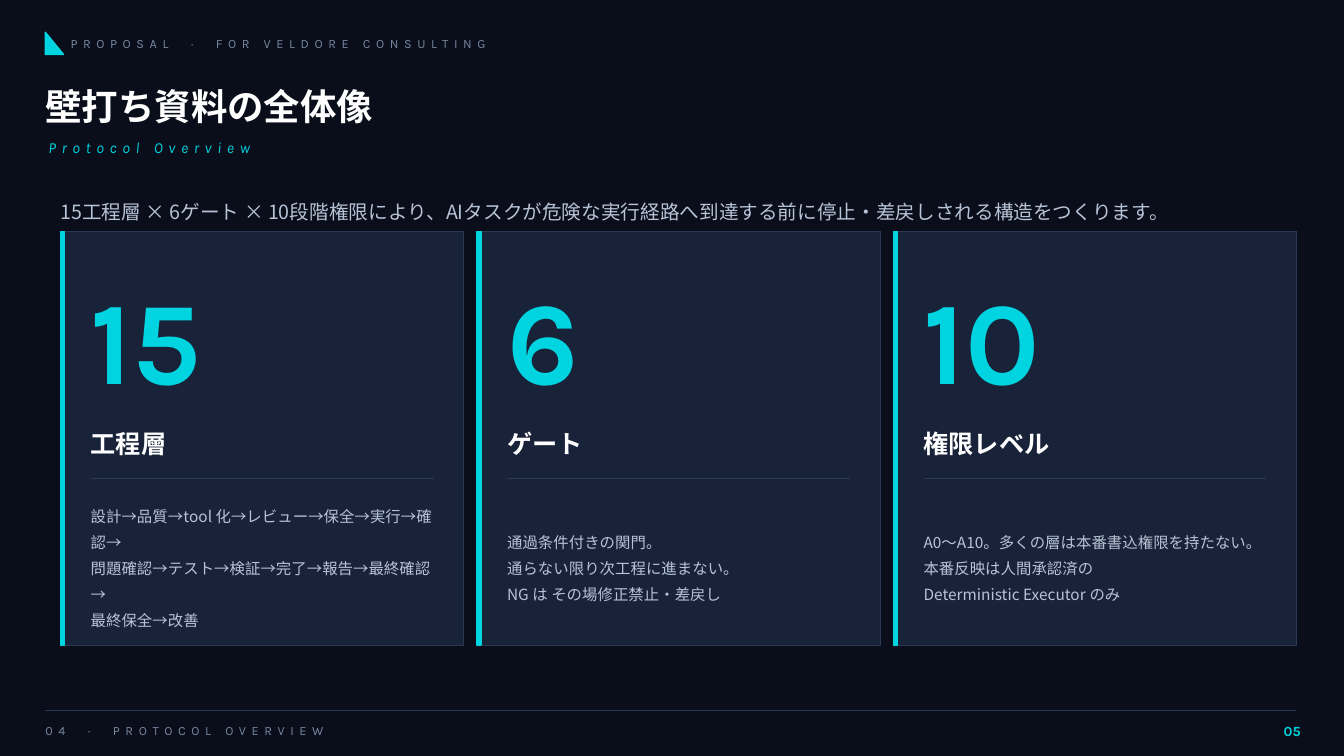
from lxml.etree import SubElement
from pptx import Presentation
from pptx.dml.color import RGBColor
from pptx.enum.shapes import MSO_CONNECTOR, MSO_SHAPE
from pptx.enum.text import MSO_ANCHOR, MSO_AUTO_SIZE, PP_ALIGN
from pptx.oxml.ns import qn
from pptx.util import Inches, Pt

COLUMN = ROW = 0.1
LATIN, JAPANESE = "Karla", "Noto Sans CJK JP"
NIGHT, PANEL, EDGE = "0A0E1A", "182238", "2A3A55"
CYAN, WHITE, MIST, SLATE = "00D4E0", "FFFFFF", "B7C3D6", "7787A0"

CARDS = [
    ("15", "工程層",
     "設計→品質→tool 化→レビュー→保全→実行→確認→\n"
     "問題確認→テスト→検証→完了→報告→最終確認→\n最終保全→改善"),
    ("6", "ゲート",
     "通過条件付きの関門。\n通らない限り次工程に進まない。\nNG は その場修正禁止・差戻し"),
    ("10", "権限レベル",
     "A0〜A10。多くの層は本番書込権限を持たない。\n本番反映は人間承認済の\n"
     "Deterministic Executor のみ"),
]


def color(hex_value):
    """Turn a hex string into a colour."""
    return RGBColor.from_string(hex_value)


def place(column, row, columns, rows):
    """Turn grid columns and rows into slide lengths."""
    return (Inches(column * COLUMN), Inches(row * ROW),
            Inches(columns * COLUMN), Inches(rows * ROW))


class Deck:
    """Holds the style and the current slide."""

    def __init__(self):
        """Open a title-only slide on the dark background."""
        self.presentation = Presentation()
        self.presentation.slide_width = Inches(13.33)
        self.presentation.slide_height = Inches(7.5)
        self.slide = self.presentation.slides.add_slide(
            self.presentation.slide_layouts[5])
        background = self.slide.background.fill
        background.solid()
        background.fore_color.rgb = color(NIGHT)

    def style(self, run, size, ink, face, bold=False, italic=False, spacing=0):
        """Format one run."""
        font = run.font
        font.size, font.bold, font.italic = Pt(size), bold, italic
        font.color.rgb = color(ink)
        font.name = face
        properties = font._element
        SubElement(properties, qn("a:ea")).set("typeface", face)
        if spacing:
            properties.set("spc", str(spacing * 100))

    def fill_frame(self, frame, wording, align=PP_ALIGN.LEFT, leading=1, **look):
        """Write and format the text of a frame."""
        frame.word_wrap = True
        frame.auto_size = MSO_AUTO_SIZE.NONE
        frame.vertical_anchor = MSO_ANCHOR.MIDDLE
        frame.margin_left = frame.margin_right = 0
        frame.margin_top = frame.margin_bottom = 0
        frame.text = wording
        for paragraph in frame.paragraphs:
            paragraph.alignment = align
            paragraph.line_spacing = leading
            for run in paragraph.runs:
                self.style(run, **look)

    def title(self, area, wording, **look):
        """Place the title placeholder."""
        heading = self.slide.shapes.title
        heading.left, heading.top, heading.width, heading.height = place(*area)
        self.fill_frame(heading.text_frame, wording, **look)

    def text(self, area, wording, **look):
        """Add a text box and return its frame."""
        frame = self.slide.shapes.add_textbox(*place(*area)).text_frame
        self.fill_frame(frame, wording, **look)
        return frame

    def spaced_label(self, area, first, second):
        """Add a letter-spaced label with a dot between its two parts."""
        look = dict(size=9, ink=SLATE, face=LATIN)
        label = self.text(area, first, spacing=4, **look).paragraphs[0]
        for part, spacing in ((" ", 10), ("·", 4), (" ", 10), (second, 4)):
            run = label.add_run()
            run.text = part
            self.style(run, spacing=spacing, **look)

    def shape(self, kind, area, fill, edge, weight=1):
        """Add a filled preset shape."""
        panel = self.slide.shapes.add_shape(kind, *place(*area))
        panel.shadow.inherit = False
        panel.fill.solid()
        panel.fill.fore_color.rgb = color(fill)
        panel.line.color.rgb = color(edge)
        panel.line.width = Pt(weight)

    def rule(self, column, row, columns):
        """Add a thin horizontal rule."""
        left, top, width, _ = place(column, row, columns, 0)
        divider = self.slide.shapes.add_connector(
            MSO_CONNECTOR.STRAIGHT, left, top, left + width, top)
        divider.line.color.rgb = color(EDGE)
        divider.line.width = Pt(0.6)
        SubElement(divider._element.spPr, qn("a:effectLst"))

    def card(self, column, figure, caption, detail):
        """Add one figure card with its accent bar."""
        inner = column + 3
        self.shape(MSO_SHAPE.RECTANGLE, (column, 23, 40, 41), PANEL, EDGE, 0.75)
        self.shape(MSO_SHAPE.RECTANGLE, (column, 23, 0.4, 41), CYAN, CYAN)
        self.text((inner, 26, 35, 15), figure,
                  size=84, ink=CYAN, face=LATIN, bold=True)
        self.text((inner, 41.5, 35, 5), caption,
                  size=18, ink=WHITE, face=JAPANESE, bold=True)
        self.rule(inner, 47.5, 34)
        self.text((inner, 49, 35, 14), detail, leading=1.4,
                  size=11, ink=MIST, face=JAPANESE)


def main():
    """Build the overview slide."""
    deck = Deck()
    deck.shape(MSO_SHAPE.RIGHT_TRIANGLE, (4.5, 3.2, 1.8, 2.2), CYAN, CYAN)
    deck.spaced_label((7, 2.7, 60, 3.2), "PROPOSAL", "FOR VELDORE CONSULTING")
    deck.title((4.5, 7.5, 120, 6), "壁打ち資料の全体像",
               size=26, ink=WHITE, face=JAPANESE, bold=True)
    deck.text((4.8, 13, 120, 3.2), "Protocol Overview",
              size=11, ink=CYAN, face=LATIN, italic=True, spacing=4)
    deck.text((6, 18.5, 122, 5),
              "15工程層 × 6ゲート × 10段階権限により、"
              "AIタスクが危険な実行経路へ到達する前に停止・差戻しされる構造をつくります。",
              size=14, ink=MIST, face=JAPANESE)
    for index, content in enumerate(CARDS):
        deck.card(6 + index * 41.3, *content)
    deck.rule(4.5, 70.5, 124)
    deck.spaced_label((4.5, 71, 90, 3), "04", "PROTOCOL OVERVIEW")
    deck.text((124.5, 71, 4.5, 3), "05", align=PP_ALIGN.RIGHT,
              size=10, ink=CYAN, face=LATIN, bold=True)
    deck.presentation.save("out.pptx")


if __name__ == "__main__":
    main()
